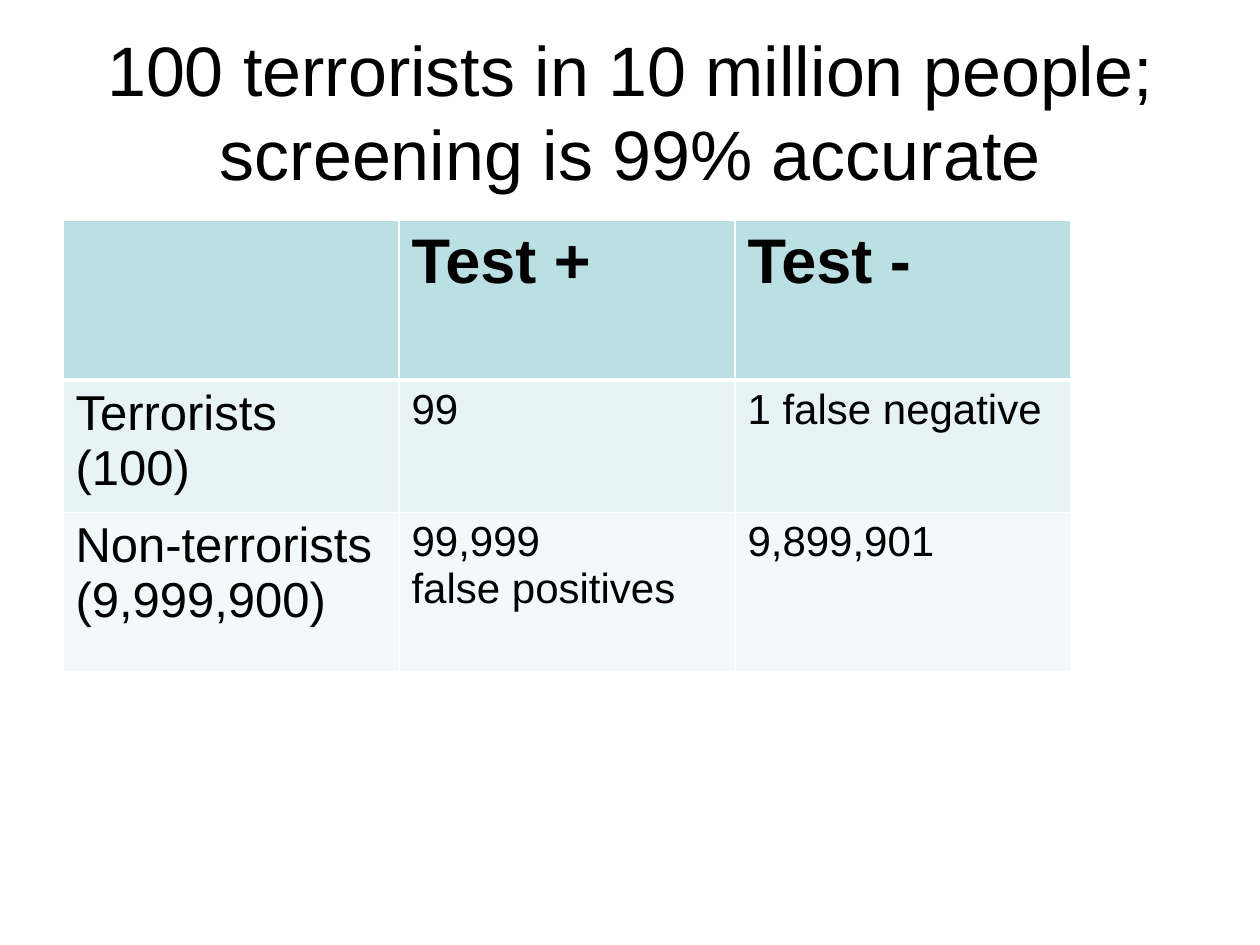
from lxml import etree
from pptx import Presentation
from pptx.dml.color import RGBColor
from pptx.enum import text as t
from pptx.oxml import ns
from pptx.util import Pt

BLACK = RGBColor(0x00, 0x00, 0x00)
WHITE = RGBColor(0xFF, 0xFF, 0xFF)
HEADER = RGBColor(0xBB, 0xE0, 0xE3)
BAND_DARK = RGBColor(0xE7, 0xF3, 0xF4)
BAND_LIGHT = RGBColor(0xF3, 0xF9, 0xFA)

TITLE = "100 terrorists in 10 million people; screening is 99% accurate"
ROWS = [
    ["", "Test +", "Test -"],
    ["Terrorists\n(100)", "99", "1 false negative"],
    ["Non-terrorists (9,999,900)", "99,999\nfalse positives", "9,899,901"],
]
ROW_FILLS = [HEADER, BAND_DARK, BAND_LIGHT]
ROW_HEIGHTS = [91.2, 75.6, 91.2]


def write(frame, words, size, bold=False, align=t.PP_ALIGN.LEFT):
    """Fill a text frame, one paragraph for each line of words."""
    frame.word_wrap = True
    for index, line in enumerate(words.split("\n")):
        para = frame.paragraphs[0] if index == 0 else frame.add_paragraph()
        para.alignment = align
        span = para.add_run()
        span.text = line
        span.font.name = "Arial"
        span.font.size = Pt(size)
        span.font.bold = bold
        span.font.color.rgb = BLACK


def set_borders(cell, bottom=1, top=1):
    """Draw white cell edges; widths are in points."""
    props = cell._tc.get_or_add_tcPr()
    widths = {"lnL": 1, "lnR": 1, "lnT": top, "lnB": bottom}
    for index, (edge, width) in enumerate(widths.items()):
        line = etree.Element(ns.qn(f"a:{edge}"), w=str(Pt(width)))
        fill = etree.SubElement(line, ns.qn("a:solidFill"))
        etree.SubElement(fill, ns.qn("a:srgbClr"), val=str(WHITE))
        props.insert(index, line)


def add_title(page, left, top, width, height):
    box = page.shapes.add_textbox(Pt(left), Pt(top), Pt(width), Pt(height))
    box.text_frame.vertical_anchor = t.MSO_ANCHOR.MIDDLE
    write(box.text_frame, TITLE, 40, align=t.PP_ALIGN.CENTER)


def add_screening_table(page, left, top, width):
    frame = page.shapes.add_table(
        len(ROWS), len(ROWS[0]), Pt(left), Pt(top), Pt(width), Pt(sum(ROW_HEIGHTS)))
    table = frame.table
    for column in table.columns:
        column.width = Pt(width / len(ROWS[0]))
    for r, labels in enumerate(ROWS):
        table.rows[r].height = Pt(ROW_HEIGHTS[r])
        for c, label in enumerate(labels):
            cell = table.cell(r, c)
            cell.fill.solid()
            cell.fill.fore_color.rgb = ROW_FILLS[r]
            set_borders(cell, bottom=3 if r == 0 else 1, top=3 if r == 1 else 1)
            if label:
                size = 36 if r == 0 else 28 if c == 0 else 24
                write(cell.text_frame, label, size, bold=r == 0)


def main():
    deck = Presentation()
    deck.slide_width, deck.slide_height = Pt(720), Pt(540)
    page = deck.slides.add_slide(deck.slide_layouts[6])
    page.background.fill.solid()
    page.background.fill.fore_color.rgb = WHITE
    add_title(page, 36, 18, 648, 90)
    add_screening_table(page, 36, 126, 576)
    deck.save("out.pptx")


if __name__ == "__main__":
    main()
